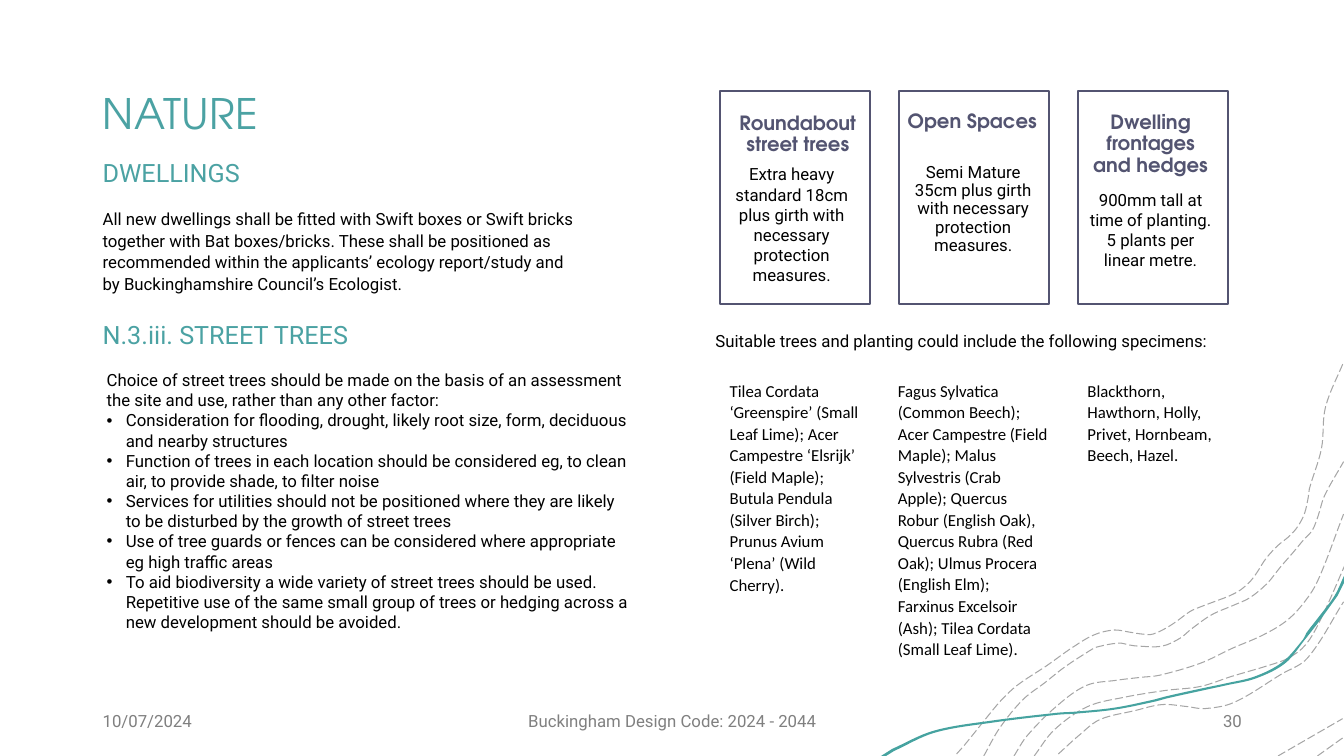
from math import hypot

from lxml import etree
from pptx import Presentation
from pptx.dml.color import RGBColor
from pptx.enum.dml import MSO_LINE
from pptx.enum.shapes import MSO_SHAPE
from pptx.enum.text import MSO_ANCHOR, MSO_AUTO_SIZE as FIT, PP_ALIGN as AL
from pptx.oxml.ns import qn
from pptx.util import Pt

PX = 9144  # 100 px to the inch
TEAL, HEADING, PURPLE = "46A3A0", "4BA2A3", "535471"
BLACK, GREY = "000000", "808080"
BODY, DISPLAY, LIST = "Roboto", "TeX Gyre Adventor", "Calibri"

CONTOURS = [
    [(949, 748), (957, 739), (978, 713), (993, 695), (1009, 680), (1039, 660), (1063, 643),
     (1085, 630), (1105, 625), (1120, 627), (1133, 629), (1144, 629), (1162, 620), (1180, 607),
     (1186, 604), (1207, 596), (1220, 591), (1231, 585), (1241, 576), (1247, 568), (1256, 554),
     (1268, 541), (1279, 532), (1287, 523), (1294, 510), (1298, 493), (1299, 485), (1311, 445),
     (1315, 404), (1333, 359)],
    [(976, 750), (992, 722), (1015, 694), (1037, 677), (1056, 662), (1082, 645), (1088, 642),
     (1110, 638), (1121, 640), (1129, 641), (1153, 641), (1171, 633), (1182, 624), (1202, 610),
     (1225, 600), (1240, 593), (1257, 579), (1270, 563), (1283, 548), (1293, 536), (1302, 526),
     (1308, 511), (1314, 492), (1333, 458)],
    [(1307, 750), (1335, 730)],
    [(1268, 750), (1332, 713)],
    [(1050, 748), (1070, 730), (1091, 714), (1126, 705), (1153, 699), (1178, 701), (1195, 703),
     (1224, 697), (1271, 669), (1297, 653), (1333, 597)],
    [(1026, 750), (1046, 724), (1079, 701), (1114, 692), (1156, 685), (1191, 681), (1222, 671),
     (1259, 660), (1278, 653), (1295, 640), (1310, 615), (1335, 559)],
    [(1006, 750), (1019, 730), (1049, 700), (1078, 680), (1107, 675), (1132, 672), (1150, 670),
     (1191, 658), (1223, 643), (1251, 631), (1275, 617), (1292, 600), (1307, 577), (1333, 510)],
]
# runs of curve, joined by straight lines
RIBBON = [
    [(1335, 569)],
    [(1335, 575)],
    [(1327, 591), (1309, 616), (1299, 629), (1295, 634), (1275, 658), (1246, 673), (1216, 680),
     (1193, 685), (1157, 693), (1146, 696), (1106, 704), (1067, 708), (1050, 709), (984, 717),
     (927, 727), (887, 745)],
    [(879, 750)],
    [(874, 750)],
    [(885, 743), (926, 725), (983, 715), (1050, 707), (1067, 706), (1106, 702), (1145, 694),
     (1156, 691), (1192, 683), (1216, 678), (1245, 671), (1272, 657), (1293, 634), (1296, 628),
     (1306, 615), (1324, 591), (1333, 572)],
]

STREET_TREES = [
    "Consideration for flooding, drought, likely root size, form, deciduous and nearby structures",
    "Function of trees in each location should be considered eg, to clean air, to provide shade, "
    "to filter noise",
    "Services for utilities should not be positioned where they are likely to be disturbed by the "
    "growth of street trees",
    "Use of tree guards or fences can be considered where appropriate eg high traffic areas",
    "To aid biodiversity a wide variety of street trees should be used. Repetitive use of the same "
    "small group of trees or hedging across a new development should be avoided.",
]
# heading, its offset and height; text, its offset and line spacing
CARDS = [
    ("Roundabout street trees", (3, 18), 50,
     "Extra heavy standard 18cm plus girth with necessary protection measures.", (-3, 68), None),
    ("Open Spaces", (-2, 16), 63,
     "Semi Mature 35cm plus girth with necessary protection measures.", (-1, 68), 0.9),
    ("Dwelling frontages and hedges", (-2, 17), 76,
     "900mm tall at time of planting. 5 plants per linear metre.", (-2, 93), None),
]
# left, width, height, species
SPECIMENS = [
    (14, 149, 225, "Tilea Cordata ‘Greenspire’ (Small Leaf Lime); Acer Campestre ‘Elsrijk’ (Field "
     "Maple); Butula Pendula (Silver Birch); Prunus Avium ‘Plena’ (Wild Cherry)."),
    (181, 170, 290, "Fagus Sylvatica (Common Beech); Acer Campestre (Field Maple); Malus Sylvestris "
     "(Crab Apple); Quercus Robur (English Oak), Quercus Rubra (Red Oak); Ulmus Procera (English "
     "Elm); Farxinus Excelsoir (Ash); Tilea Cordata (Small Leaf Lime)."),
    (369, 149, 96, "Blackthorn, Hawthorn, Holly, Privet, Hornbeam, Beech, Hazel."),
]


def rgb(color):
    return RGBColor.from_string(color)


def add_run(p, text, size, color, font, bold=False):
    r = p.add_run()
    r.text = text
    f = r.font
    f.size, f.name, f.bold = Pt(size), font, bold
    f.color.rgb = rgb(color)
    return r


def add_text(s, box, text, size=12, color=BLACK, font=BODY, bold=False, align=AL.LEFT,
             anchor=MSO_ANCHOR.TOP, line=None, before=None, after=None, grow=False):
    tf = s.shapes.add_textbox(*(v * PX for v in box)).text_frame
    tf.word_wrap = True
    tf.auto_size = FIT.SHAPE_TO_FIT_TEXT if grow else FIT.NONE
    tf.vertical_anchor = anchor
    p = tf.paragraphs[0]
    p.alignment, p.line_spacing = align, line
    if before is not None:
        p.space_before = Pt(before)
    if after is not None:
        p.space_after = Pt(after)
    add_run(p, text, size, color, font, bold)
    return tf


def add_bullet(tf, text):
    p = tf.add_paragraph()
    pPr = p._p.get_or_add_pPr()
    pPr.set("marL", str(19 * PX))
    pPr.set("indent", str(-19 * PX))
    etree.SubElement(pPr, qn("a:buFont")).set("typeface", "Arial")
    etree.SubElement(pPr, qn("a:buChar")).set("char", "•")
    add_run(p, text, 12, BLACK, BODY)


def with_handles(run):
    """Return the points of a run with two Bézier handles between neighbours."""
    padded = [run[0], *run, run[-1]]
    points = [run[0]]
    for a, b, c, d in zip(padded, padded[1:], padded[2:], padded[3:]):
        reach = hypot(c[0] - b[0], c[1] - b[1]) / 3
        out, back = (reach / hypot(q[0] - p[0], q[1] - p[1]) for p, q in ((a, c), (b, d)))
        points += [tuple(v + (q - p) * out for v, p, q in zip(b, a, c)),
                   tuple(v - (q - p) * back for v, p, q in zip(c, b, d)), c]
    return points


def add_outline(s, runs, close=False):
    points = [tuple(v * PX for v in pt) for run in runs for pt in with_handles(run)]
    builder = s.shapes.build_freeform(*points[0])
    builder.add_line_segments(points[1:], close=close)
    shape = builder.convert_to_shape()
    shape.shadow.inherit = False
    lines = iter(shape._element.findall(".//" + qn("a:lnTo")))
    for i, run in enumerate(runs):
        if i:
            next(lines)
        for _ in run[1:]:
            curve, handle, end = (next(lines) for _ in range(3))
            curve.tag = qn("a:cubicBezTo")
            for line in (handle, end):
                curve.append(line[0])
                line.getparent().remove(line)
    return shape


def add_contours(s):
    for run in CONTOURS:
        contour = add_outline(s, [run])
        contour.fill.background()
        line = contour.line
        line.color.rgb, line.width = rgb(BLACK), Pt(0.75)
        line.dash_style = MSO_LINE.LONG_DASH
        color = line._ln.find(".//" + qn("a:srgbClr"))
        etree.SubElement(color, qn("a:alpha")).set("val", "35000")
    ribbon = add_outline(s, RIBBON, True)
    ribbon.fill.solid()
    ribbon.fill.fore_color.rgb = rgb(TEAL)
    ribbon.line.fill.background()


def add_title(s, box, text):
    title = s.shapes.title
    title.left, title.top, title.width, title.height = (v * PX for v in box)
    tf = title.text_frame
    tf.word_wrap, tf.auto_size, tf.vertical_anchor = True, FIT.NONE, MSO_ANCHOR.MIDDLE
    p = tf.paragraphs[0]
    p.alignment, p.line_spacing = AL.LEFT, 0.9
    add_run(p, text, 30, HEADING, DISPLAY).font._element.set("spc", "30")


def add_guidance(s, x, y):
    for dy, heading in ((0, "DWELLINGS"), (161, "N.3.iii. STREET TREES")):
        add_text(s, (x, y + dy, 646, 40), heading, 18, HEADING, grow=True)
    add_text(s, (x, y + 50, 497, 95),
             "All new dwellings shall be fitted with Swift boxes or Swift bricks together with Bat "
             "boxes/bricks. These shall be positioned as recommended within the applicants’ ecology "
             "report/study and by Buckinghamshire Council’s Ecologist.",
             line=1.07, after=8, grow=True)
    tf = add_text(s, (x + 4, y + 211, 538, 273),
                  "Choice of street trees should be made on the basis of an assessment the site and "
                  "use, rather than any other factor:", grow=True)
    for text in STREET_TREES:
        add_bullet(tf, text)


def add_card(s, x, y, heading, head_at, head_h, text, text_at, line):
    w, h = 149, 212
    frame = s.shapes.add_shape(MSO_SHAPE.RECTANGLE, *(v * PX for v in (x, y, w, h)))
    frame.shadow.inherit = False
    frame.fill.background()
    frame.line.color.rgb, frame.line.width = rgb(PURPLE), Pt(1.5)
    dx, dy = head_at
    add_text(s, (x + dx, y + dy, w, head_h), heading, 14, PURPLE, DISPLAY, True,
             AL.CENTER, line=0.9, before=10)
    dx, dy = text_at
    add_text(s, (x + dx, y + dy, w, h - 8 - dy), text, align=AL.CENTER, line=line, before=10)


def add_specimens(s, x, y):
    add_text(s, (x, y, 530, 30), "Suitable trees and planting could include the following specimens:",
             line=1.07, after=8, grow=True)
    for dx, w, h, species in SPECIMENS:
        add_text(s, (x + dx, y + 49, w, h), species, font=LIST, line=1.07, after=8, grow=True)


def add_footer(s, y):
    for x, w, text, align in ((92, 300, "10/07/2024", AL.LEFT),
                              (442, 450, "Buckingham Design Code: 2024 - 2044", AL.CENTER),
                              (942, 300, "30", AL.RIGHT)):
        add_text(s, (x, y, w, 40), text, color=GREY, align=align, anchor=MSO_ANCHOR.MIDDLE)


def main():
    prs = Presentation()
    prs.slide_height = 750 * PX
    prs.slide_width = prs.slide_height * 16 // 9
    s = prs.slides.add_slide(prs.slide_layouts[5])
    add_contours(s)
    add_footer(s, 695)
    add_title(s, (92, 42, 1200, 145), "NATURE")
    add_guidance(s, 92, 151)
    for i, card in enumerate(CARDS):
        add_card(s, 714 + round(177.5 * i), 90, *card)
    add_specimens(s, 700, 322)
    prs.save("out.pptx")


if __name__ == "__main__":
    main()
